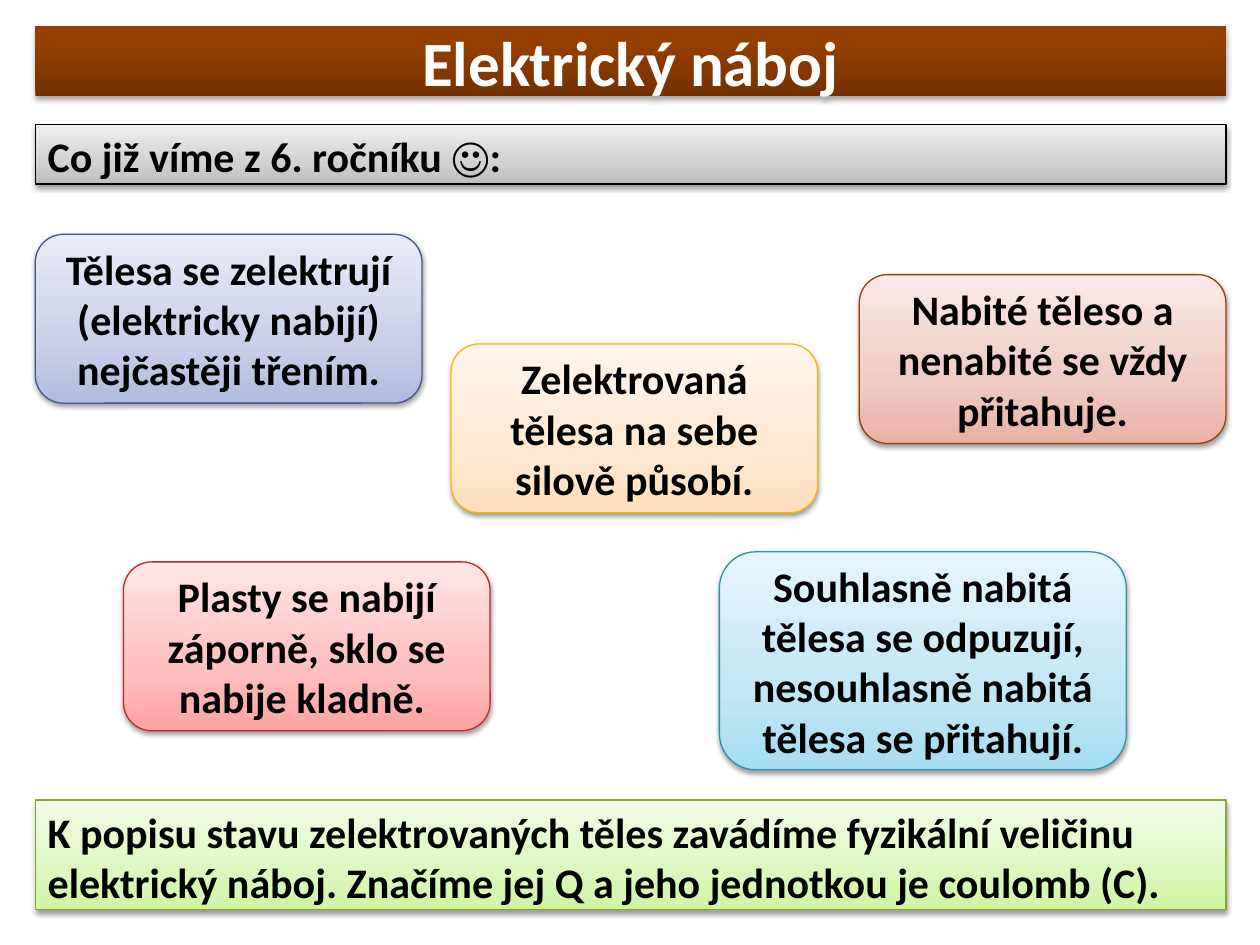
from copy import deepcopy
from dataclasses import dataclass

from lxml import etree
from pptx import Presentation
from pptx.dml.color import RGBColor
from pptx.enum.shapes import MSO_SHAPE
from pptx.enum.text import MSO_ANCHOR, PP_ALIGN
from pptx.oxml.ns import qn
from pptx.util import Inches, Pt

BAR, CARD = MSO_SHAPE.RECTANGLE, MSO_SHAPE.ROUNDED_RECTANGLE
TOP, MIDDLE = MSO_ANCHOR.TOP, MSO_ANCHOR.MIDDLE
LEFT, CENTER = PP_ALIGN.LEFT, PP_ALIGN.CENTER
SLIDE_WIDTH, SLIDE_HEIGHT = 10, 7.5
MARGIN = 0.28
BAR_WIDTH = 9.45
CARD_WIDTH, CARD_HEIGHT = 2.91, 1.34


@dataclass(frozen=True)
class Tone:
    """Gradient colours from bottom to top, and the outline colour."""
    bottom: str
    middle: str
    top: str
    outline: str = ""
    middle_at: float = 0.35


@dataclass(frozen=True)
class Theme:
    """Colours and type of the slide."""
    font: str = "Calibri"
    title_size: int = 36
    body_size: int = 24
    title_ink: str = "FFFFFF"
    body_ink: str = "000000"
    shadow_ink: str = "000000"
    outline_width: float = 0.75
    brown: Tone = Tone("743100", "964000", "974100", middle_at=0.8)
    grey: Tone = Tone("BDBDBD", "D1D1D1", "EEEEEE", "000000")
    blue: Tone = Tone("B2BBE0", "C9CFE8", "EAECF7", "44578C")
    red: Tone = Tone("FFA3A3", "FFBEBE", "FFE6E6", "C22829")
    orange: Tone = Tone("FFDFBC", "FFE8D0", "FFF6ED", "FEB604")
    cyan: Tone = Tone("A5DDF3", "C1E6F5", "E6F6FC", "348FA6")
    rust: Tone = Tone("EAB1A6", "EFC9C2", "FAEAE7", "964101")
    green: Tone = Tone("D0F5A3", "DDF7BF", "F2FDE6", "82A92F")


THEME = Theme()


def paint(shape, tone):
    """Fill the shape with a three-colour vertical gradient and outline it."""
    shape.fill.gradient()
    shape.fill.gradient_angle = 90
    stop_list = next(shape._element.spPr.iter(qn("a:gsLst")))
    stop_list.append(deepcopy(stop_list[0]))
    colours = (tone.bottom, tone.middle, tone.top)
    positions = (0, tone.middle_at, 1)
    for stop, colour, position in zip(shape.fill.gradient_stops, colours, positions):
        stop.color.rgb = RGBColor.from_string(colour)
        stop.position = position
    if tone.outline:
        shape.line.color.rgb = RGBColor.from_string(tone.outline)
        shape.line.width = Pt(THEME.outline_width)
    else:
        shape.line.fill.background()


def cast_shadow(shape, opacity, distance):
    """Give the shape a soft shadow straight below it."""
    shape.shadow.inherit = False
    effects = shape._element.spPr.find(qn("a:effectLst"))
    shadow = etree.SubElement(
        effects, qn("a:outerShdw"), blurRad=str(Pt(3.1)), dist=str(Pt(distance)),
        dir="5400000", rotWithShape="0")
    colour = etree.SubElement(shadow, qn("a:srgbClr"), val=THEME.shadow_ink)
    etree.SubElement(colour, qn("a:alpha"), val=str(opacity * 1000))


def write(shape, text, size, ink, align, anchor):
    """Set the shape's text in bold."""
    frame = shape.text_frame
    frame.text = text
    frame.word_wrap = True
    frame.vertical_anchor = anchor
    paragraph = frame.paragraphs[0]
    paragraph.alignment = align
    font = paragraph.runs[0].font
    font.name, font.size, font.bold = THEME.font, Pt(size), True
    font.color.rgb = RGBColor.from_string(ink)


def add_panel(slide, kind, box, tone, opacity=38, distance=1.6):
    """Add a painted shape with a shadow."""
    panel = slide.shapes.add_shape(kind, *map(Inches, box))
    paint(panel, tone)
    cast_shadow(panel, opacity, distance)
    return panel


def add_title(slide, text):
    """Add the heading bar."""
    heading = add_panel(slide, BAR, (MARGIN, 0.21, BAR_WIDTH, 0.55), THEME.brown, 35, 1.8)
    write(heading, text, THEME.title_size, THEME.title_ink, CENTER, MIDDLE)


def add_statement(slide, text, top, height, tone):
    """Add a full-width bar with left-aligned text."""
    statement = add_panel(slide, BAR, (MARGIN, top, BAR_WIDTH, height), tone)
    write(statement, text, THEME.body_size, THEME.body_ink, LEFT, TOP)


def add_fact(slide, text, left, top, tone, width=CARD_WIDTH, height=CARD_HEIGHT):
    """Add a rounded card holding one fact."""
    fact = add_panel(slide, CARD, (left, top, width, height), tone)
    write(fact, text, THEME.body_size, THEME.body_ink, CENTER, MIDDLE)


def main():
    """Build the slide and save it."""
    deck = Presentation()
    deck.slide_width, deck.slide_height = Inches(SLIDE_WIDTH), Inches(SLIDE_HEIGHT)
    slide = deck.slides.add_slide(deck.slide_layouts[6])
    add_title(slide, "Elektrický náboj")
    add_statement(slide, "Co již víme z 6. ročníku ☺:", 0.99, 0.47, THEME.grey)
    add_fact(slide, "Tělesa se zelektrují (elektricky nabijí) nejčastěji třením.",
             MARGIN, 1.86, THEME.blue, width=3.07)
    add_fact(slide, "Plasty se nabijí záporně, sklo se nabije kladně. ",
             0.98, 4.46, THEME.red)
    add_fact(slide, "Zelektrovaná tělesa na sebe silově působí.",
             3.58, 2.73, THEME.orange)
    add_fact(slide, "Souhlasně nabitá tělesa se odpuzují, "
             "nesouhlasně nabitá tělesa se přitahují.",
             5.71, 4.38, THEME.cyan, width=3.23, height=1.73)
    add_fact(slide, "Nabité těleso a nenabité se vždy přitahuje.",
             MARGIN + BAR_WIDTH - CARD_WIDTH, 2.18, THEME.rust)
    add_statement(slide, "K popisu stavu zelektrovaných těles zavádíme fyzikální veličinu "
                  "elektrický náboj. Značíme jej Q a jeho jednotkou je coulomb (C).",
                  6.35, 0.87, THEME.green)
    deck.save("out.pptx")


if __name__ == "__main__":
    main()
